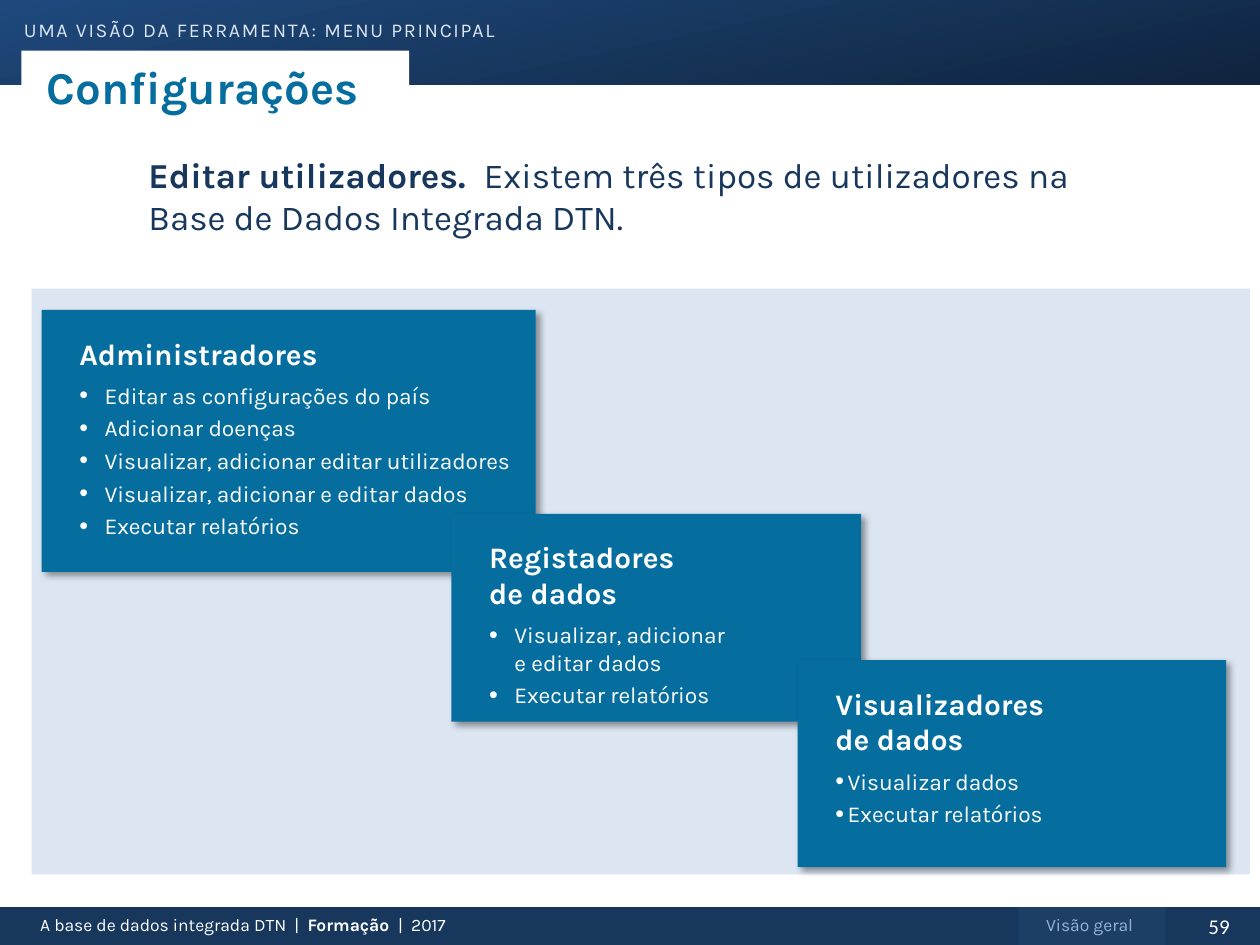
from dataclasses import dataclass

from lxml.etree import SubElement
from pptx import Presentation
from pptx.dml.color import RGBColor
from pptx.enum.shapes import MSO_SHAPE
from pptx.enum.text import MSO_ANCHOR, MSO_AUTO_SIZE, PP_ALIGN
from pptx.oxml.ns import qn
from pptx.util import Cm, Pt


@dataclass(frozen=True)
class Theme:
    font: str = "Karla"
    number_font: str = "Calibri"
    white: str = "FFFFFF"
    pale: str = "DCE6F2"
    muted: str = "95B3D7"
    accent: str = "066E9F"
    navy: str = "17375D"
    tab: str = "1E3F65"
    gradient: tuple = ("1F497D", "0F243E")
    title_size: int = 26
    intro_size: int = 20
    heading_size: int = 17
    section_size: int = 14
    list_size: int = 13
    number_size: int = 12
    footer_size: int = 10


theme = Theme()


def set_font(paragraph, size, color, bold=False, name=theme.font):
    paragraph.font.name = name
    paragraph.font.size = Pt(size)
    paragraph.font.bold = bold
    paragraph.font.color.rgb = RGBColor.from_string(color)


def add_rectangle(left, top, width, height, color):
    rectangle = slide.shapes.add_shape(
        MSO_SHAPE.RECTANGLE, Cm(left), Cm(top), Cm(width), Cm(height)
    )
    rectangle.shadow.inherit = False
    rectangle.line.fill.background()
    rectangle.fill.solid()
    rectangle.fill.fore_color.rgb = RGBColor.from_string(color)
    return rectangle


presentation = Presentation()
presentation.slide_width = Cm(25.4)
presentation.slide_height = Cm(19.05)
slide = presentation.slides.add_slide(presentation.slide_layouts[1])
title, section = slide.placeholders

header = add_rectangle(0, 0, 25.4, 1.7, theme.navy)
header.fill.gradient()
header.fill.gradient_angle = 282
for stop, color in zip(header.fill.gradient_stops, theme.gradient):
    stop.color.rgb = RGBColor.from_string(color)

add_rectangle(0, 18.29, 25.4, 0.76, theme.navy)
add_rectangle(20.53, 18.29, 2.97, 0.76, theme.tab)

footers = [
    (0.56, 18.31, 11.5, ["A base de dados integrada DTN  |  ", "Formação  ", "|  2017"],
     PP_ALIGN.LEFT, theme.footer_size, theme.white, theme.font),
    (20.53, 18.31, 2.87, ["Visão geral"],
     PP_ALIGN.CENTER, theme.footer_size, theme.muted, theme.font),
    (23.75, 18.29, 1.65, ["59"],
     PP_ALIGN.CENTER, theme.number_size, theme.white, theme.number_font),
]
for left, top, width, texts, alignment, size, color, name in footers:
    footer = slide.shapes.add_textbox(Cm(left), Cm(top), Cm(width), Cm(0.69))
    footer.text_frame.word_wrap = True
    paragraph = footer.text_frame.paragraphs[0]
    paragraph.alignment = alignment
    set_font(paragraph, size, color, name=name)
    for text in texts:
        run = paragraph.add_run()
        run.text = text
        if text.startswith("Formação"):
            run.font.bold = True

intro = slide.shapes.add_textbox(Cm(1.9), Cm(2.97), Cm(21.16), Cm(11))
intro.text_frame.word_wrap = True
paragraph = intro.text_frame.paragraphs[0]
paragraph._p.get_or_add_pPr().set("marL", str(Cm(0.84)))
set_font(paragraph, theme.intro_size, theme.navy)
lead = paragraph.add_run()
lead.text = "Editar utilizadores.  "
lead.font.bold = True
paragraph.add_run().text = (
    "Existem três tipos de utilizadores na Base de Dados Integrada DTN."
)

headings = [
    (section, 0.48, 0.13, 10.54, 0.86, 0, "uma visão da ferramenta: menu principal",
     theme.section_size, theme.pale, False),
    (title, 0.43, 1.02, 7.82, 1.42, 0.51, "Configurações",
     theme.title_size, theme.accent, True),
]
for shape, left, top, width, height, inset, text, size, color, bold in headings:
    slide.shapes._spTree.append(shape._element)
    shape.left, shape.top, shape.width, shape.height = map(Cm, (left, top, width, height))
    frame = shape.text_frame
    frame.text = text
    frame.word_wrap = True
    frame.auto_size = MSO_AUTO_SIZE.NONE
    frame.margin_left = frame.margin_right = Cm(inset)
    frame.margin_top = frame.margin_bottom = Cm(0.13)
    paragraph = frame.paragraphs[0]
    paragraph.alignment = PP_ALIGN.LEFT
    properties = paragraph._p.get_or_add_pPr()
    properties.set("marL", "0")
    properties.set("indent", "0")
    SubElement(properties, qn("a:buNone"))
    set_font(paragraph, size, color, bold)

section_properties = section.text_frame.paragraphs[0].runs[0]._r.get_or_add_rPr()
section_properties.set("cap", "small")
section_properties.set("spc", "100")
title.text_frame.vertical_anchor = MSO_ANCHOR.MIDDLE
title.fill.solid()
title.fill.fore_color.rgb = RGBColor.from_string(theme.white)

add_rectangle(0.64, 5.82, 24.56, 11.81, theme.pale)

roles = [
    (0.84, 6.25, 9.96, 5.28, 0.51, "Administradores", [
        "Editar as configurações do país",
        "Adicionar doenças",
        "Visualizar, adicionar editar utilizadores",
        "Visualizar, adicionar e editar dados",
        "Executar relatórios",
    ]),
    (9.1, 10.36, 8.26, 4.19, 0.51, "Registadores\nde dados", [
        "Visualizar, adicionar\ne editar dados",
        "Executar relatórios",
    ]),
    (16.08, 13.31, 8.64, 4.17, 0.25, "Visualizadores\nde dados", [
        "Visualizar dados",
        "Executar relatórios",
    ]),
]
for left, top, width, height, indent, role, permissions in roles:
    card = add_rectangle(left, top, width, height, theme.accent)
    effects = card._element.spPr.find(qn("a:effectLst"))
    shadow = SubElement(
        effects, qn("a:outerShdw"), blurRad=str(Pt(4)), dist=str(Pt(3)),
        dir="2700000", algn="tl", rotWithShape="0",
    )
    shadow_color = SubElement(shadow, qn("a:srgbClr"), val="000000")
    SubElement(shadow_color, qn("a:alpha"), val="40000")

    frame = card.text_frame
    frame.word_wrap = True
    frame.vertical_anchor = MSO_ANCHOR.TOP
    frame.margin_left = Cm(0.76)
    frame.margin_top = frame.margin_right = Cm(0.51)
    frame.margin_bottom = 0
    paragraph = frame.paragraphs[0]
    paragraph.text = role
    paragraph.alignment = PP_ALIGN.LEFT
    paragraph.space_after = Pt(6)
    set_font(paragraph, theme.heading_size, theme.white, True)

    for permission in permissions:
        paragraph = frame.add_paragraph()
        paragraph.text = permission
        paragraph.alignment = PP_ALIGN.LEFT
        paragraph.space_after = Pt(3)
        properties = paragraph._p.get_or_add_pPr()
        properties.set("marL", str(Cm(indent)))
        properties.set("indent", str(-Cm(indent)))
        SubElement(properties, qn("a:buSzPct"), val="110000")
        SubElement(properties, qn("a:buFont"), typeface="Arial")
        SubElement(properties, qn("a:buChar"), char="•")
        set_font(paragraph, theme.list_size, theme.white)

presentation.save("out.pptx")
